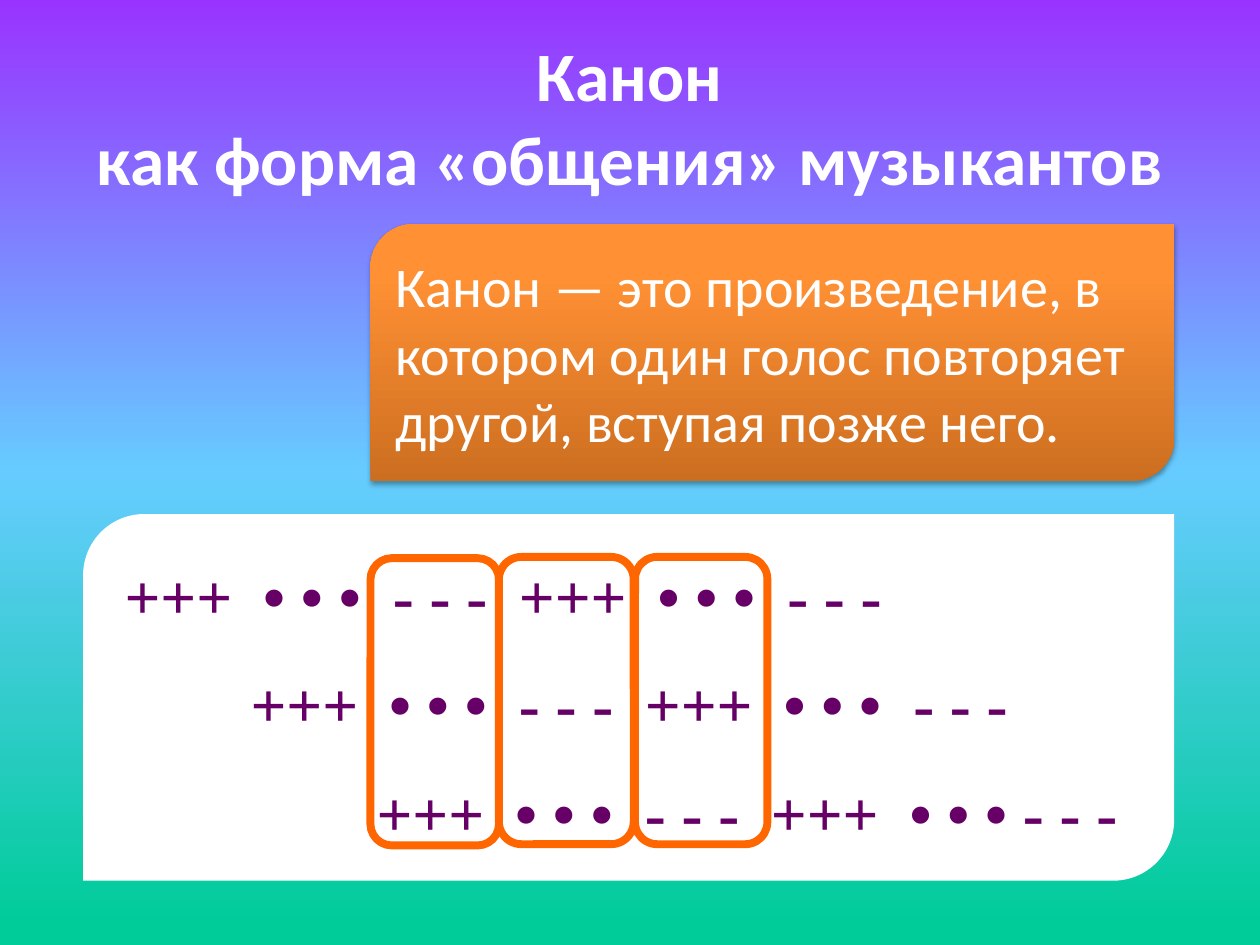
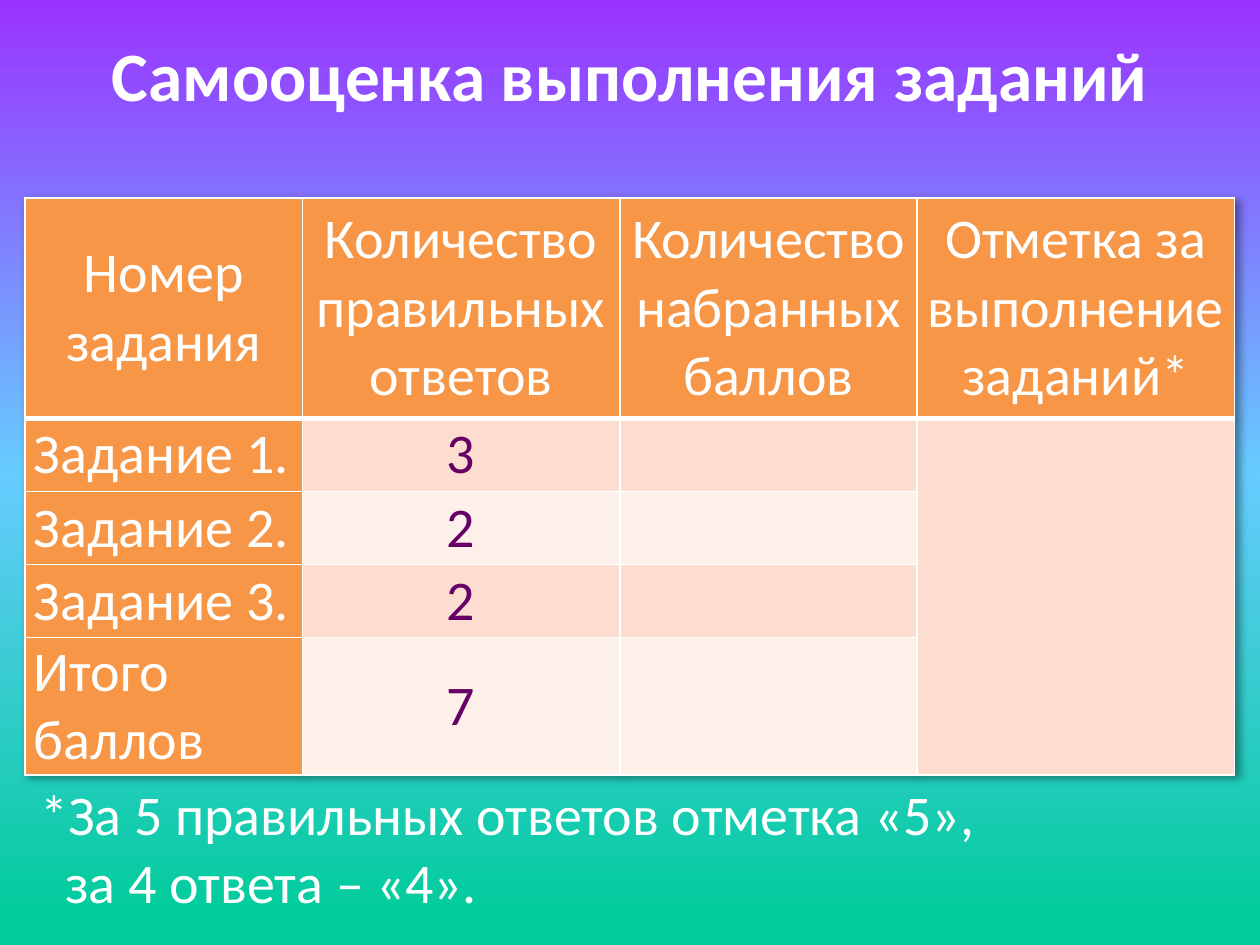
from lxml import etree
from pptx import Presentation
from pptx.dml.color import RGBColor
from pptx.enum import shapes, text
from pptx.oxml import ns
from pptx.util import Inches, Pt

WHITE = RGBColor(0xFF, 0xFF, 0xFF)
PLUM = RGBColor(0x66, 0x00, 0x66)
FLAME = RGBColor(0xFF, 0x66, 0x00)
ORANGE = RGBColor(0xF7, 0x96, 0x46)
PEACH = RGBColor(0xFC, 0xDD, 0xCF)
CREAM = RGBColor(0xFD, 0xEF, 0xE9)
SKY = [(0, RGBColor(0x99, 0x33, 0xFF)), (50, RGBColor(0x66, 0xCC, 0xFF)),
       (98, RGBColor(0x00, 0xCC, 0x99))]
AMBER = [(0, RGBColor(0xCC, 0x6E, 0x20)), (80, RGBColor(0xFF, 0x90, 0x34)),
         (100, RGBColor(0xFF, 0x91, 0x36))]
BODY_FONT, SCORE_FONT = "Calibri", "Times New Roman"
LEFT, CENTER, JUSTIFY = text.PP_ALIGN.LEFT, text.PP_ALIGN.CENTER, text.PP_ALIGN.JUSTIFY
TOP, MIDDLE = text.MSO_ANCHOR.TOP, text.MSO_ANCHOR.MIDDLE
LEAF = shapes.MSO_SHAPE.ROUND_2_DIAG_RECTANGLE
ROUNDED = shapes.MSO_SHAPE.ROUNDED_RECTANGLE


def child(parent, tag, **attributes):
    return etree.SubElement(parent, ns.qn(tag), {k: str(v) for k, v in attributes.items()})


def gradient(fill, element, stops, angle):
    fill.gradient()
    fill.gradient_angle = 360 - angle
    stop_list = element.find(".//" + ns.qn("a:gsLst"))
    for stop in list(stop_list):
        stop_list.remove(stop)
    for percent, color in stops:
        child(child(stop_list, "a:gs", pos=percent * 1000), "a:srgbClr", val=color)


def cast_shadow(effects, alpha, blur, distance, angle):
    shadow = child(effects, "a:outerShdw", blurRad=Pt(blur), dist=Pt(distance),
                   dir=angle * 60000, algn="t", rotWithShape=0)
    child(child(shadow, "a:srgbClr", val="000000"), "a:alpha", val=alpha * 1000)


class Deck:
    """Holds the shared style and the slide being filled."""

    def __init__(self):
        self.presentation = Presentation()
        self.presentation.slide_width = Inches(10)
        self.presentation.slide_height = Inches(7.5)

    def slide(self, title):
        slide = self.presentation.slides.add_slide(self.presentation.slide_layouts[6])
        gradient(slide.background.fill, slide.element, SKY, 90)
        self.shapes = slide.shapes
        frame = self.textbox((0.5, 0.26, 9, 1.34), [title], 39.6, align=CENTER, bold=True)
        frame.margin_top = frame.margin_bottom = 0

    def put_text(self, frame, lines, size, color=WHITE, font=BODY_FONT, align=LEFT,
                 bold=False, tab_rows=()):
        frame.word_wrap = True
        frame.text = "\n".join(lines)
        for paragraph, tabs in zip(frame.paragraphs, tab_rows):
            paragraph.line_spacing = 1.2
            paragraph.space_after = Pt(10)
            tab_list = child(paragraph._p.get_or_add_pPr(), "a:tabLst")
            for tab in tabs:
                child(tab_list, "a:tab", pos=Inches(tab), algn="l")
        for paragraph in frame.paragraphs:
            paragraph.alignment = align
            paragraph.font.name = font
            paragraph.font.size = Pt(size)
            paragraph.font.bold = bold
            paragraph.font.color.rgb = color

    def textbox(self, box, lines, size, **style):
        frame = self.shapes.add_textbox(*map(Inches, box)).text_frame
        self.put_text(frame, lines, size, **style)
        frame.vertical_anchor = TOP
        return frame

    def shape(self, kind, box, fill=None, line=None, width=4.5):
        shape = self.shapes.add_shape(kind, *map(Inches, box))
        shape.shadow.inherit = False
        if fill is None:
            shape.fill.background()
        else:
            shape.fill.solid()
            shape.fill.fore_color.rgb = fill
        if line is None:
            shape.line.fill.background()
        else:
            shape.line.color.rgb = line
            shape.line.width = Pt(width)
        return shape

    def card(self, box, words):
        card = self.shape(LEAF, box)
        gradient(card.fill, card.element, AMBER, 270)
        cast_shadow(card.element.find(".//" + ns.qn("a:effectLst")), 35, 3.1, 1.8, 90)
        self.put_text(card.text_frame, [words], 32)
        card.text_frame.vertical_anchor = MIDDLE

    def voices(self, box, voices, starts, step):
        lines = ["\t" * (i > 0) + "\t".join(voice) for i, voice in enumerate(voices)]
        tab_rows = [[start + i * step for start in starts if i or start]
                    for i in range(len(voices))]
        self.textbox(box, lines, 36, color=PLUM, font=SCORE_FONT, bold=True,
                     tab_rows=tab_rows)

    def cell(self, cell, words, fill, color, align, bottom):
        cell.margin_left = cell.margin_right = Inches(0.07)
        cell.margin_top = cell.margin_bottom = 0
        cell.vertical_anchor = MIDDLE
        properties = cell._tc.get_or_add_tcPr()
        for side, width in zip("LRTB", (1, 1, 1, bottom)):
            line = child(properties, "a:ln" + side, w=Pt(width))
            child(child(line, "a:solidFill"), "a:srgbClr", val=WHITE)
        cell.fill.solid()
        cell.fill.fore_color.rgb = fill
        if words:
            self.put_text(cell.text_frame, [words], 32, color=color, align=align)

    def table(self, left, top, widths, heights, rows):
        table = self.shapes.add_table(len(rows), len(widths), Inches(left), Inches(top),
                                      Inches(sum(widths)), Inches(sum(heights))).table
        table.first_row = table.horz_banding = False
        effects = etree.Element(ns.qn("a:effectLst"))
        cast_shadow(effects, 40, 4, 3, 45)
        table._tbl.tblPr.insert(0, effects)
        for column, width in zip(table.columns, widths):
            column.width = Inches(width)
        for r, (row, height) in enumerate(zip(rows, heights)):
            table.rows[r].height = Inches(height)
            for c, words in enumerate(row):
                heading = r == 0 or c == 0
                fill = ORANGE if heading else PEACH if r % 2 or c == 3 else CREAM
                self.cell(table.cell(r, c), words, fill, WHITE if heading else PLUM,
                          LEFT if r and c == 0 else CENTER, 1 if r else 3)
        return table


def canon_slide(deck):
    deck.slide("Канон\vкак форма «общения» музыкантов")
    slide_shapes = deck.shapes
    deck.shapes = slide_shapes.add_group_shape().shapes
    deck.shape(LEAF, (0.66, 4.08, 8.66, 2.91), fill=WHITE)
    melody = ["+++", "• • •", "- - -"] * 2
    last_voice = melody[:4] + ["• • • - - -"]
    deck.voices((0.89, 4.25, 8.29, 2.74), [melody, melody, last_voice],
                [0, 1.1, 2.13, 3.13, 4.23, 5.26], 1)
    deck.shapes = slide_shapes
    for left, top, width in ((2.94, 4.43, 1.02), (3.96, 4.42, 1.07), (5.04, 4.42, 1.05)):
        deck.shape(ROUNDED, (left, top, width, 2.28), line=FLAME)
    deck.card((2.94, 1.78, 6.38, 2.04), "Канон — это произведение, в котором один голос "
              "повторяет другой, вступая позже него.")


def assessment_slide(deck):
    deck.slide("Самооценка выполнения заданий")
    scores = deck.table(0.2, 1.57, [2.2, 2.52, 2.36, 2.52], [1.75, 0.58, 0.58, 0.58, 1.09], [
        ["Номер задания", "Количество правильных ответов",
         "Количество набранных баллов", "Отметка за выполнение заданий*"],
        ["Задание 1.", "3", "", ""],
        ["Задание 2.", "2", "", ""],
        ["Задание 3.", "2", "", ""],
        ["Итого баллов", "7", "", ""],
    ])
    scores.cell(1, 3).merge(scores.cell(4, 3))
    note = deck.textbox((0.22, 6.14, 9.61, 1.18),
                        ["*За 5 правильных ответов отметка «5»,", "за 4 ответа – «4»."],
                        32, align=JUSTIFY)
    note.paragraphs[1]._p.get_or_add_pPr().set("marL", str(Inches(0.2)))


def main():
    deck = Deck()
    canon_slide(deck)
    assessment_slide(deck)
    deck.presentation.save("out.pptx")


if __name__ == "__main__":
    main()
